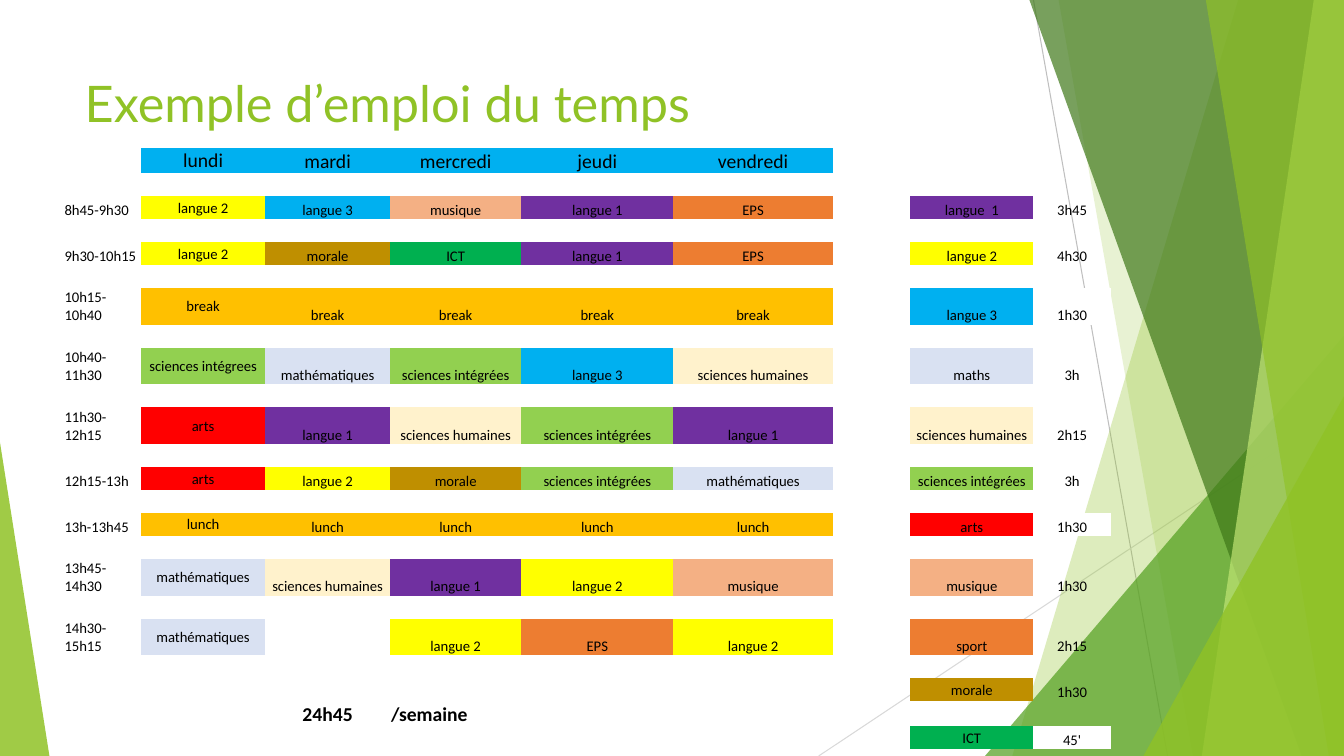
from lxml import etree
from pptx import Presentation
from pptx.dml.color import RGBColor
from pptx.enum.shapes import MSO_CONNECTOR, MSO_SHAPE
from pptx.enum.text import MSO_ANCHOR, PP_ALIGN
from pptx.oxml.ns import qn
from pptx.util import Inches, Pt

STRAIGHT = MSO_CONNECTOR.STRAIGHT
TRIANGLE = MSO_SHAPE.ISOSCELES_TRIANGLE
TOP, MIDDLE, BOTTOM = MSO_ANCHOR.TOP, MSO_ANCHOR.MIDDLE, MSO_ANCHOR.BOTTOM
LEFT, CENTER = PP_ALIGN.LEFT, PP_ALIGN.CENTER

THEME = {
    "accent": "90C226", "leaf": "54A021", "forest": "3F7819", "lime": "C0E474",
    "text": "000000", "white": "FFFFFF", "header": "00B0F0",
    "title_font": "Lato", "body_font": "Calibri",
    "title_size": 36, "header_size": 14, "body_size": 10.5,
    "row_height": 16.4, "header_height": 17.9, "wrapped_height": 26.3,
}
SUBJECT_COLOURS = {
    "langue 1": "7030A0", "langue  1": "7030A0", "langue 2": "FFFF00", "langue 3": "00B0F0",
    "musique": "F4B084", "EPS": "ED7D31", "sport": "ED7D31", "morale": "BF8F00",
    "ICT": "00B050", "break": "FFC000", "lunch": "FFC000", "arts": "FF0000",
    "sciences intégrees": "92D050", "sciences intégrées": "92D050",
    "sciences humaines": "FFF2CC", "mathématiques": "D9E1F2", "maths": "D9E1F2",
}
DAYS = ["lundi", "mardi", "mercredi", "jeudi", "vendredi"]
LESSONS = [
    ["8h45-9h30", "langue 2", "langue 3", "musique", "langue 1", "EPS"],
    ["9h30-10h15", "langue 2", "morale", "ICT", "langue 1", "EPS"],
    ["10h15-10h40"] + ["break"] * 5,
    ["10h40-11h30", "sciences intégrees", "mathématiques", "sciences intégrées",
     "langue 3", "sciences humaines"],
    ["11h30-12h15", "arts", "langue 1", "sciences humaines", "sciences intégrées", "langue 1"],
    ["12h15-13h", "arts", "langue 2", "morale", "sciences intégrées", "mathématiques"],
    ["13h-13h45"] + ["lunch"] * 5,
    ["13h45-14h30", "mathématiques", "sciences humaines", "langue 1", "langue 2", "musique"],
    ["14h30-15h15", "mathématiques", "", "langue 2", "EPS", "langue 2"],
]
WEEKLY_HOURS = [
    ("langue  1", "3h45"), ("langue 2", "4h30"), ("langue 3", "1h30"), ("maths", "3h"),
    ("sciences humaines", "2h15"), ("sciences intégrées", "3h"), ("arts", "1h30"),
    ("musique", "1h30"), ("sport", "2h15"), ("morale", "1h30"), ("ICT", "45'"),
]
COLUMN_WIDTHS = [0.77, 1.23, 1.24, 1.3, 1.51, 1.58, 0.77, 1.22, 0.77]
HOURS_COLUMN = 7
TOTAL_ROW = 21
WHITE_HOURS_ROWS = (6, 14, 22)


def paint(shape, colour, opacity):
    shape.shadow.inherit = False
    shape.line.fill.background()
    shape.fill.solid()
    shape.fill.fore_color.rgb = RGBColor.from_string(THEME[colour])
    tint = shape.fill._xPr.find(".//" + qn("a:srgbClr"))
    etree.SubElement(tint, qn("a:alpha"), val=str(opacity * 1000))


def write(para, text, font="body_font", size="body_size", colour="text", bold=False, align=CENTER):
    para.alignment = align
    span = para.add_run()
    span.text = text
    span.font.name = THEME[font]
    span.font.size = Pt(THEME[size])
    span.font.bold = bold
    span.font.color.rgb = RGBColor.from_string(THEME[colour])


deck = Presentation()
deck.slide_width, deck.slide_height = Inches(13.33), Inches(7.5)
right, bottom = deck.slide_width, deck.slide_height
page = deck.slides.add_slide(deck.slide_layouts[5])

for start_x, start_y, end_x, end_y, grey in [
    (10.25, 0, 11.58, 7.5, "BFBFBF"),
    (13.33, 4.03, 8.12, 7.5, "D9D9D9"),
]:
    ray = page.shapes.add_connector(
        STRAIGHT, Inches(start_x), Inches(start_y), Inches(end_x), Inches(end_y))
    ray.line.color.rgb = RGBColor.from_string(grey)
    ray.line.width = Pt(0.75)
    etree.SubElement(ray._element.spPr, qn("a:effectLst"))

for kind, geometry, colour, opacity in [
    ("band", (12.28, 10.04), "accent", 30),
    ("band", (10.5, 11.83), "accent", 20),
    ("triangle", (9.77, 3.33, 3.56, 1), "leaf", 72),
    ("band", (10.21, 12.91), "forest", 70),
    ("band", (13.03, 11.92), "lime", 70),
    ("band", (11.96, 13.18), "accent", 65),
    ("triangle", (11.34, 3.93, 1.99, 1), "accent", 80),
    ("triangle", (0, 4.39, 0.49, 0), "accent", 85),
]:
    if kind == "band":
        upper, lower = map(Inches, geometry)
        outline = page.shapes.build_freeform(upper, 0)
        outline.add_line_segments([(right, 0), (right, bottom), (lower, bottom)], close=True)
        facet = outline.convert_to_shape()
    else:
        left, top, width, apex = geometry
        facet = page.shapes.add_shape(
            TRIANGLE, Inches(left), Inches(top), Inches(width), bottom - Inches(top))
        facet.adjustments[0] = apex
    paint(facet, colour, opacity)

title = page.shapes.title
title.left, title.top, title.width, title.height = map(Inches, (0.74, 0.67, 9.4, 1.44))
title.text_frame.vertical_anchor = TOP
title.text_frame.word_wrap = True
write(title.text_frame.paragraphs[0], "Exemple d’emploi du temps",
      font="title_font", size="title_size", colour="accent", align=LEFT)
page.shapes._spTree.append(title._element)

texts = {(0, column): day for column, day in enumerate(DAYS, 1)}
for index, lesson in enumerate(LESSONS, 1):
    texts.update({(2 * index, column): text for column, text in enumerate(lesson)})
for index, (subject, hours) in enumerate(WEEKLY_HOURS, 1):
    texts[2 * index, HOURS_COLUMN] = subject
    texts[2 * index, HOURS_COLUMN + 1] = hours
texts[TOTAL_ROW, 2] = "24h45"
texts[TOTAL_ROW, 3] = "/semaine"

row_total = 2 * len(WEEKLY_HOURS) + 1
frame = page.shapes.add_table(
    row_total, len(COLUMN_WIDTHS), Inches(0.63), Inches(1.47),
    Inches(sum(COLUMN_WIDTHS)), Pt(THEME["row_height"] * row_total))
timetable = frame.table
timetable.first_row = timetable.horz_banding = False
timetable._tbl.tblPr.find(qn("a:tableStyleId")).text = "{2D5ABB26-0587-4C30-8999-92F81FD0307C}"
for column, width in enumerate(COLUMN_WIDTHS):
    timetable.columns[column].width = Inches(width)

for row in range(row_total):
    large = row in (0, TOTAL_ROW)
    wrapped = len(texts.get((row, 0), "")) > 10
    height = "header_height" if large else "wrapped_height" if wrapped else "row_height"
    timetable.rows[row].height = Pt(THEME[height])
    for column in range(len(COLUMN_WIDTHS)):
        cell = timetable.cell(row, column)
        cell.margin_left = cell.margin_right = cell.margin_top = Inches(0.01)
        cell.margin_bottom = 0
        centred = column == 1 or (column == HOURS_COLUMN and row >= 20)
        cell.vertical_anchor = MIDDLE if centred else BOTTOM
        text = texts.get((row, column), "")
        para = cell.text_frame.paragraphs[0]
        if text:
            write(para, text, size="header_size" if large else "body_size",
                  bold=row == TOTAL_ROW,
                  align=LEFT if column == 0 or text == "/semaine" else CENTER)
        else:
            etree.SubElement(para._p, qn("a:endParaRPr"), sz=str(int(THEME["body_size"] * 100)))
        fill = THEME["header"] if text in DAYS else SUBJECT_COLOURS.get(text)
        if column == HOURS_COLUMN + 1 and row in WHITE_HOURS_ROWS:
            fill = THEME["white"]
        if fill:
            cell.fill.solid()
            cell.fill.fore_color.rgb = RGBColor.from_string(fill)
        else:
            cell.fill.background()

deck.save("out.pptx")
